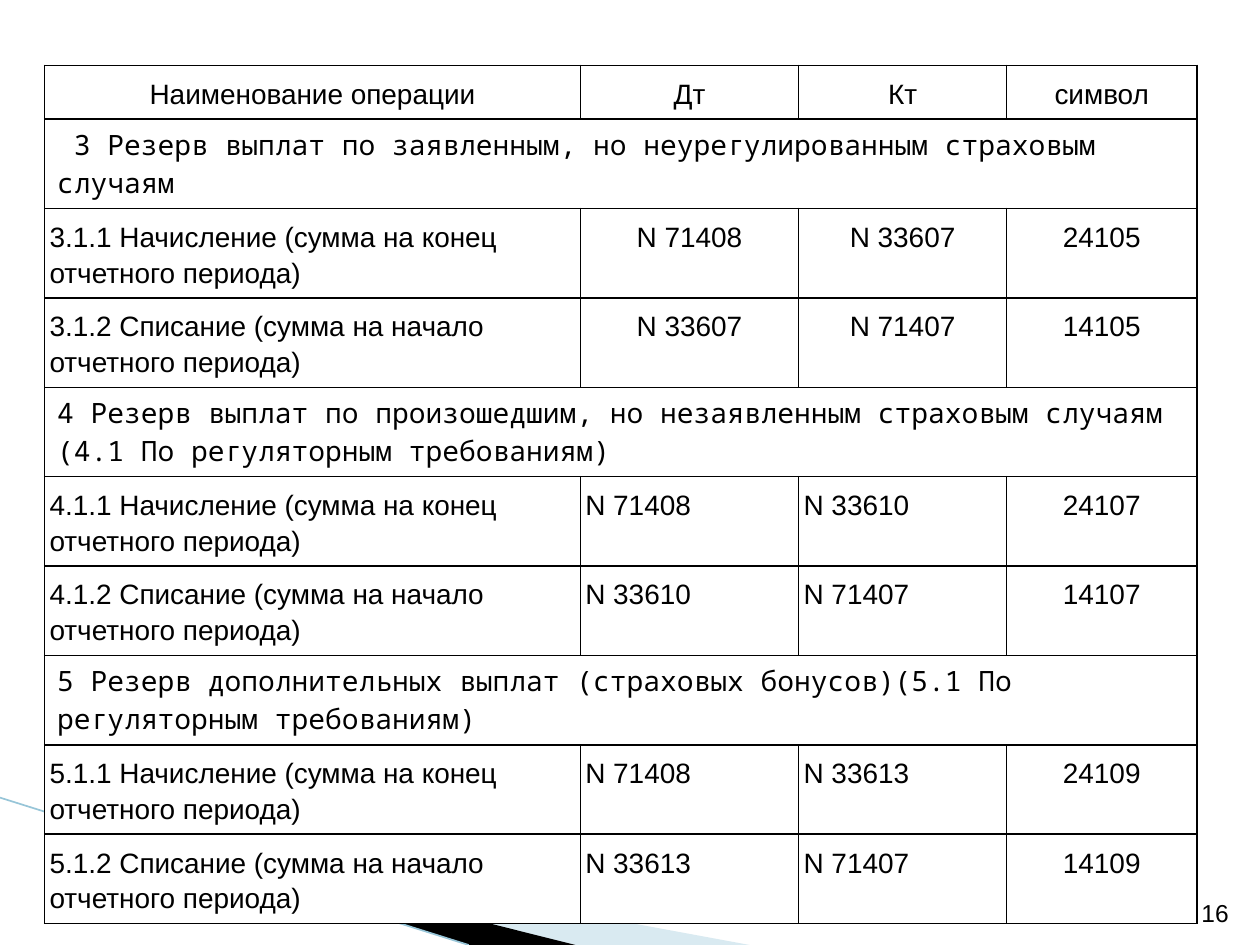
from lxml.etree import SubElement
from pptx import Presentation
from pptx.dml.color import RGBColor
from pptx.enum.text import MSO_ANCHOR as Anchor, PP_ALIGN as Align
from pptx.oxml.ns import qn
from pptx.util import Cm, Pt

COLORS = {"text": "000000", "paper": "FFFFFF", "pale": "A0CBDC",
          "black": "000000", "edge": "97C5D8", "border": "000000"}
ACCRUAL = "Начисление (сумма на конец отчетного периода)"
WRITE_OFF = "Списание (сумма на начало отчетного периода)"

HEADER = ("Наименование операции", "Дт", "Кт", "символ")
# Section heading, item number, reserve account, symbol ending, account alignment
SECTIONS = [
    (" 3 Резерв выплат по заявленным, но неурегулированным страховым случаям",
     "3.1", "33607", "4105", Align.CENTER),
    ("4 Резерв выплат по произошедшим, но незаявленным страховым случаям "
     "(4.1 По регуляторным требованиям)",
     "4.1", "33610", "4107", Align.LEFT),
    ("5 Резерв дополнительных выплат (страховых бонусов)"
     "(5.1 По регуляторным требованиям)",
     "5.1", "33613", "4109", Align.LEFT),
]
COLUMN_WIDTHS = (10.8, 4.4, 4.19, 3.84)
HEADER_HEIGHT, ROW_HEIGHT = 1.07, 1.8


def color(name):
    return RGBColor.from_string(COLORS[name])


class SlideBuilder:
    font = "Arial"
    heading_font = "Noto Sans Mono"
    size = 16

    def __init__(self, page):
        self.page = page

    def wedge(self, points, fill, opacity=100):
        start, *rest = [(Cm(x), Cm(y)) for x, y in points]
        builder = self.page.shapes.build_freeform(*start)
        builder.add_line_segments(rest, close=True)
        shape = builder.convert_to_shape()
        shape.shadow.inherit = False
        shape.line.fill.background()
        shape.fill.solid()
        shape.fill.fore_color.rgb = color(fill)
        if opacity < 100:
            tint = shape.fill._xPr.find(qn("a:solidFill"))[0]
            SubElement(tint, qn("a:alpha"), val=str(opacity * 1000))

    def line(self, start, end, stroke, width):
        ends = [Cm(value) for value in (*start, *end)]
        connector = self.page.shapes.add_connector(1, *ends)
        connector.line.color.rgb = color(stroke)
        connector.line.width = Pt(width)
        SubElement(connector._element.spPr, qn("a:effectLst"))

    def style(self, para, align, font=None, size=None):
        para.alignment = align
        para.font.name = font or self.font
        para.font.size = Pt(size or self.size)
        para.font.color.rgb = color("text")

    def text(self, text, left, top, width, height, size, align):
        box = self.page.shapes.add_textbox(Cm(left), Cm(top), Cm(width), Cm(height))
        frame = box.text_frame
        frame.word_wrap = True
        frame.vertical_anchor = Anchor.BOTTOM
        frame.text = text
        self.style(frame.paragraphs[0], align, size=size)

    def table(self, rows, left, top, widths, heights):
        """Draw rows of (text, align) cells; a row of one cell spans the table."""
        frame = self.page.shapes.add_table(
            len(rows), len(widths), Cm(left), Cm(top),
            Cm(sum(widths)), Cm(sum(heights)))
        table = frame.table
        for column, width in zip(table.columns, widths):
            column.width = Cm(width)
        for row, height in zip(table.rows, heights):
            row.height = Cm(height)
        for r, cells in enumerate(rows):
            for cell in table.rows[r].cells:
                self.frame_cell(cell)
            if len(cells) == 1:
                table.cell(r, 0).merge(table.cell(r, len(widths) - 1))
            for c, (text, align) in enumerate(cells):
                self.fill_cell(table.cell(r, c), text, align, len(cells) == 1)

    def frame_cell(self, cell):
        properties = cell._tc.get_or_add_tcPr()
        for side in ("lnL", "lnR", "lnT", "lnB"):
            border = SubElement(properties, qn(f"a:{side}"), w=str(Pt(1)))
            fill = SubElement(border, qn("a:solidFill"))
            SubElement(fill, qn("a:srgbClr"), val=COLORS["border"])
        cell.fill.solid()
        cell.fill.fore_color.rgb = color("paper")

    def fill_cell(self, cell, text, align, is_heading):
        cell.text = text
        para = cell.text_frame.paragraphs[0]
        self.style(para, align, self.heading_font if is_heading else self.font)
        if not is_heading:
            para.line_spacing = 1.15
            cell.margin_left = cell.margin_right = Cm(0.1)
            cell.margin_top = cell.margin_bottom = Cm(0.18)


def operation_rows():
    rows = [[(title, Align.CENTER) for title in HEADER]]
    for heading, number, account, symbol, align in SECTIONS:
        rows.append([(heading, Align.LEFT)])
        entries = ((ACCRUAL, "71408", account, "2"), (WRITE_OFF, account, "71407", "1"))
        for index, (name, debit, credit, prefix) in enumerate(entries, 1):
            rows.append([(f"{number}.{index} {name}", Align.LEFT),
                         (f"N {debit}", align), (f"N {credit}", align),
                         (prefix + symbol, Align.CENTER)])
    return rows


def main():
    deck = Presentation()
    deck.slide_width, deck.slide_height = Cm(25.4), Cm(19.05)
    slide = SlideBuilder(deck.slides.add_slide(deck.slide_layouts[6]))

    slide.wedge([(1.4, 16.52), (15.11, 19.05), (11.58, 19.05)], "pale", 40)
    slide.wedge([(1.35, 16.48), (11.6, 19.05), (9.45, 19.05)], "black")
    slide.line((0, 16.08), (9.45, 19.05), "edge", 0.95)

    rows = operation_rows()
    heights = [HEADER_HEIGHT] + [ROW_HEIGHT] * (len(rows) - 1)
    slide.table(rows, 0.9, 1.32, COLUMN_WIDTHS, heights)
    slide.text("16", 23.5, 17.73, 1.52, 1.09, 14, Align.RIGHT)

    deck.save("out.pptx")


if __name__ == "__main__":
    main()
